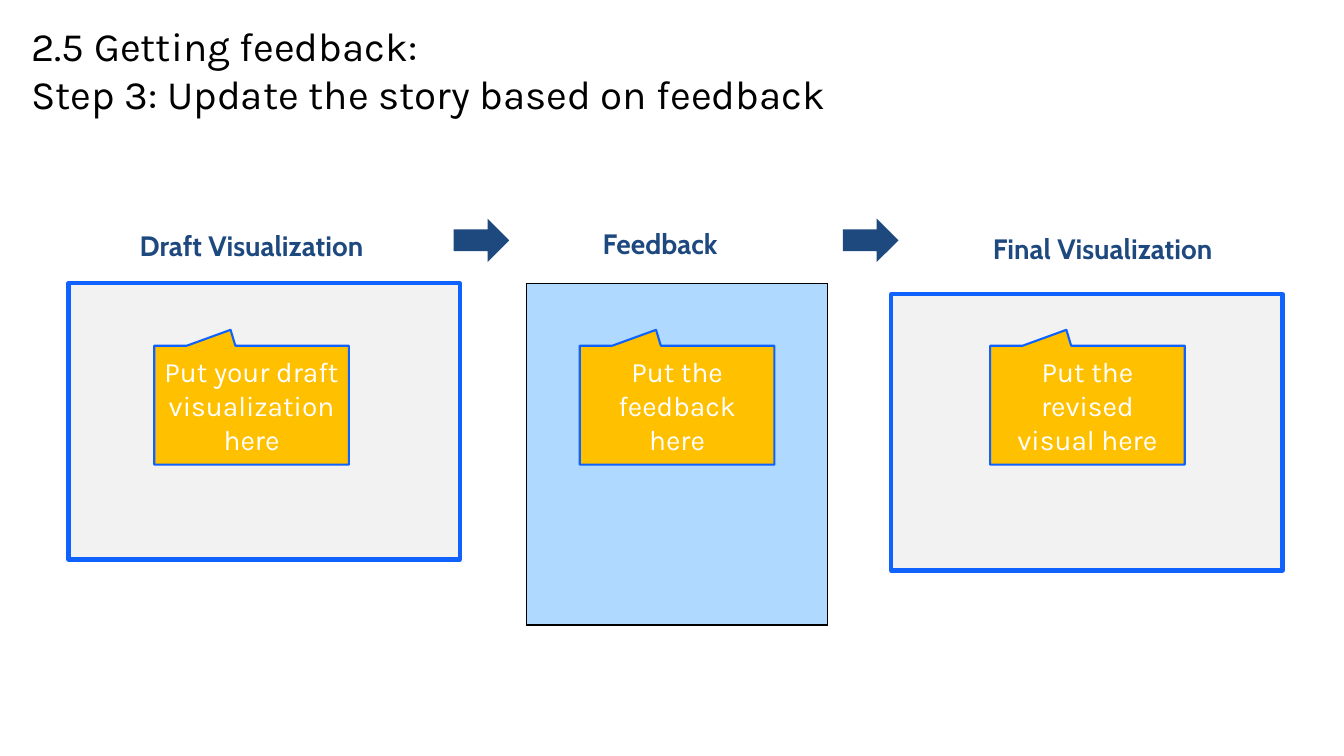
from lxml.etree import SubElement
from pptx import Presentation
from pptx.dml.color import RGBColor
from pptx.enum.shapes import MSO_SHAPE as Preset
from pptx.enum.text import MSO_ANCHOR as Anchor, PP_ALIGN as Align
from pptx.oxml.ns import qn
from pptx.util import Inches, Pt

BLACK = RGBColor(0x00, 0x00, 0x00)
WHITE = RGBColor(0xFF, 0xFF, 0xFF)
NAVY = RGBColor(0x1E, 0x49, 0x7F)
BLUE = RGBColor(0x0F, 0x62, 0xFE)
SKY = RGBColor(0xAF, 0xD9, 0xFF)
GREY = RGBColor(0xF2, 0xF2, 0xF2)
AMBER = RGBColor(0xFF, 0xC0, 0x00)


class FeedbackSlide:
    body_font = "Karla"
    heading_font = "Cabin"
    label_size = 20

    def __init__(self, presentation):
        self.width = presentation.slide_width
        self.height = presentation.slide_height
        self.slide = presentation.slides.add_slide(presentation.slide_layouts[6])

    def place(self, left, top, width, height):
        return (
            round(self.width * left / 100),
            round(self.height * top / 100),
            round(self.width * width / 100),
            round(self.height * height / 100),
        )

    def add_text(self, paragraph, text, font, size, color, bold=False):
        run = paragraph.add_run()
        run.text = text
        run.font.name = font
        run.font.size = Pt(size)
        run.font.bold = bold
        run.font.color.rgb = color

    def set_margins(self, frame, margin):
        frame.margin_left = frame.margin_right = margin
        frame.margin_top = frame.margin_bottom = margin

    def title(self, lines, *area):
        frame = self.slide.shapes.add_textbox(*self.place(*area)).text_frame
        frame.word_wrap = True
        self.set_margins(frame, 0)
        paragraph = frame.paragraphs[0]
        for index, line in enumerate(lines):
            if index:
                paragraph.add_line_break()
            self.add_text(paragraph, line, self.body_font, 28.8, BLACK)

    def heading(self, text, *area, align=Align.LEFT):
        frame = self.slide.shapes.add_textbox(*self.place(*area)).text_frame
        frame.word_wrap = True
        paragraph = frame.paragraphs[0]
        paragraph.alignment = align
        paragraph.line_spacing = 1.23
        self.add_text(paragraph, text, self.heading_font, self.label_size, NAVY, bold=True)

    def shape(self, preset, fill, *area, line=None, line_width=0):
        shape = self.slide.shapes.add_shape(preset, *self.place(*area))
        shape.shadow.inherit = False
        shape.fill.solid()
        shape.fill.fore_color.rgb = fill
        if line is None:
            shape.line.fill.background()
        else:
            shape.line.color.rgb = line
            shape.line.width = Pt(line_width)
        return shape

    def arrow(self, left):
        self.shape(Preset.RIGHT_ARROW, NAVY, left, 28.93, 4.13, 5.73)

    def panel(self, left, top):
        self.shape(Preset.RECTANGLE, GREY, left, top, 29.11, 36.53, line=BLUE, line_width=3)

    def callout(self, text, left):
        shape = self.shape(Preset.RECTANGULAR_CALLOUT, AMBER, left, 45.73, 14.48, 15.73,
                           line=BLUE, line_width=1.5)
        shape.adjustments[0] = -0.108
        shape.adjustments[1] = -0.634
        frame = shape.text_frame
        frame.word_wrap = True
        frame.vertical_anchor = Anchor.MIDDLE
        self.set_margins(frame, Inches(0.1))
        paragraph = frame.paragraphs[0]
        paragraph.alignment = Align.CENTER
        self.add_text(paragraph, text, self.body_font, self.label_size, WHITE)

    def feedback_table(self, *area):
        table = self.slide.shapes.add_table(1, 1, *self.place(*area)).table
        table.first_row = False
        table.horz_banding = False
        cell = table.cell(0, 0)
        properties = cell._tc.get_or_add_tcPr()
        for side in ("a:lnL", "a:lnR", "a:lnT", "a:lnB"):
            border = SubElement(properties, qn(side), w=str(Pt(1)))
            fill = SubElement(border, qn("a:solidFill"))
            SubElement(fill, qn("a:srgbClr"), val=str(BLACK))
        cell.fill.solid()
        cell.fill.fore_color.rgb = SKY


def main():
    presentation = Presentation()
    presentation.slide_width = Inches(13.33)
    presentation.slide_height = Inches(7.5)
    page = FeedbackSlide(presentation)

    page.title(["2.5 Getting feedback:", "Step 3: Update the story based on feedback"],
               2.33, 2.8, 80.2, 11.07)
    page.heading("Draft Visualization", 8.85, 28.53, 19.73, 6.4, align=Align.CENTER)
    page.heading("Feedback", 44.11, 28.27, 33.31, 6.4)
    page.heading("Final Visualization", 73.14, 28.93, 21.31, 6.4)
    for left in (33.76, 62.72):
        page.arrow(left)
    page.feedback_table(39.16, 37.47, 22.43, 45.2)
    for left, top in ((5.1, 37.47), (66.32, 38.93)):
        page.panel(left, top)
    for text, left in (
        ("Put your draft visualization here", 11.48),
        ("Put the revised visual here", 73.67),
        ("Put the feedback here", 43.14),
    ):
        page.callout(text, left)

    presentation.save("out.pptx")


if __name__ == "__main__":
    main()
